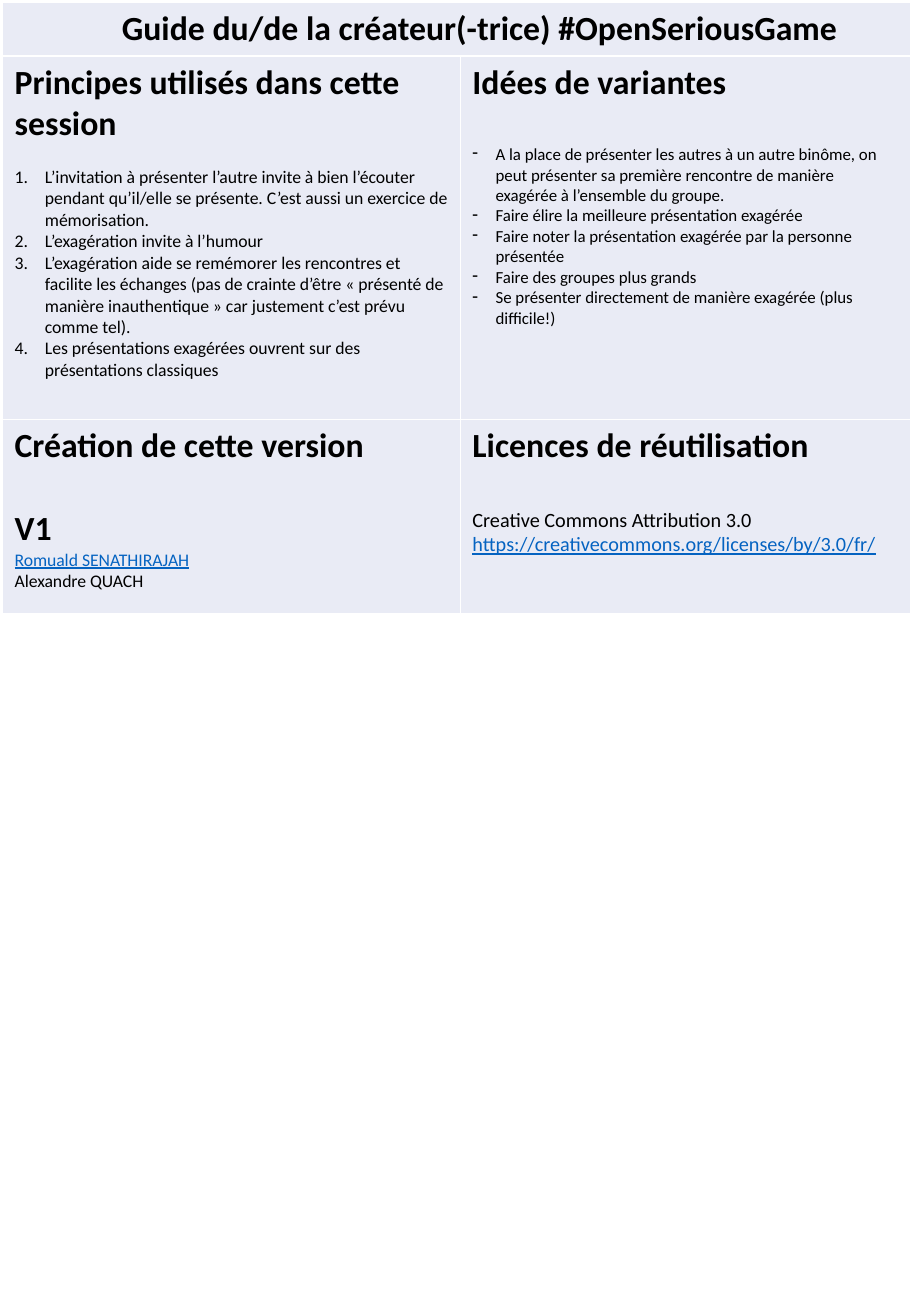
import pptx
import pptx.dml.color
import pptx.enum.text
import pptx.oxml.ns
import pptx.util
from lxml import etree

PAGE_WIDTH, PAGE_HEIGHT = 7.5, 10.83
MARGIN = 0.02
COLUMNS = [3.77, 3.71]
ROWS = [0.44, 2.99, 1.6]
FONT = "Calibri"
HEADING_SIZE = 20
COLORS = {"cell": "E9EBF5", "border": "FFFFFF", "text": "000000", "link": "0563C1"}
NUMBER = ("buAutoNum", "type", "arabicPeriod")
DASH = ("buChar", "char", "-")

PRINCIPLES = [
    "L’invitation à présenter l’autre invite à bien l’écouter pendant qu’il/elle se présente. "
    "C’est aussi un exercice de mémorisation.",
    "L’exagération invite à l’humour",
    "L’exagération aide se remémorer les rencontres et facilite les échanges (pas de crainte "
    "d’être « présenté de manière inauthentique » car justement c’est prévu comme tel).",
    "Les présentations exagérées ouvrent sur des présentations classiques",
]
VARIANTS = [
    "A la place de présenter les autres à un autre binôme, on peut présenter sa première "
    "rencontre de manière exagérée à l’ensemble du groupe.",
    "Faire élire la meilleure présentation exagérée",
    "Faire noter la présentation exagérée par la personne présentée",
    "Faire des groupes plus grands",
    "Se présenter directement de manière exagérée (plus difficile!)",
]


def rgb(name):
    return pptx.dml.color.RGBColor.from_string(COLORS[name])


def add_element(parent, tag, **attributes):
    return etree.SubElement(parent, pptx.oxml.ns.qn(f"a:{tag}"), attributes)


def style_cell(cell):
    properties = cell._tc.get_or_add_tcPr()
    for side in ("lnL", "lnR", "lnT", "lnB"):
        line = add_element(properties, side, w=str(pptx.util.Pt(1)))
        fill = add_element(line, "solidFill")
        add_element(fill, "srgbClr", val=COLORS["border"])
    cell.fill.solid()
    cell.fill.fore_color.rgb = rgb("cell")


def add_paragraph(cell, text, size, bold=False, link=False):
    frame = cell.text_frame
    first = frame.paragraphs[0]
    para = frame.add_paragraph() if first.runs else first
    span = para.add_run()
    span.text = text
    font = span.font
    font.name = FONT
    font.size = pptx.util.Pt(size)
    font.bold = bold
    font.underline = link
    font.color.rgb = rgb("link" if link else "text")
    return para


def add_heading(cell, text, gap=24.4):
    para = add_paragraph(cell, text, HEADING_SIZE, bold=True)
    para.space_after = pptx.util.Pt(gap)


def add_list(cell, items, size, indent, bullet):
    tag, attribute, value = bullet
    for item in items:
        para = add_paragraph(cell, item, size)
        properties = para._p.get_or_add_pPr()
        properties.set("marL", str(pptx.util.Inches(indent)))
        properties.set("indent", str(-pptx.util.Inches(indent)))
        add_element(properties, tag, **{attribute: value})


def add_guide_table(page):
    frame = page.shapes.add_table(
        len(ROWS), len(COLUMNS), pptx.util.Inches(MARGIN), pptx.util.Inches(MARGIN),
        pptx.util.Inches(sum(COLUMNS)), pptx.util.Inches(sum(ROWS)))
    table = frame.table
    table.first_row = False
    table.horz_banding = False
    for column, width in zip(table.columns, COLUMNS):
        column.width = pptx.util.Inches(width)
    for row, height in zip(table.rows, ROWS):
        row.height = pptx.util.Inches(height)
    for cell in table.iter_cells():
        style_cell(cell)
    return table


def fill_title(table):
    cell = table.cell(0, 0)
    cell.merge(table.cell(0, 1))
    para = add_paragraph(
        cell, "Guide du/de la créateur(-trice) #OpenSeriousGame", HEADING_SIZE, bold=True)
    para.alignment = pptx.enum.text.PP_ALIGN.CENTER
    properties = para._p.get_or_add_pPr()
    properties.set("marL", str(pptx.util.Inches(0.38)))
    properties.set("indent", "0")


def fill_sections(table):
    principles, variants = table.cell(1, 0), table.cell(1, 1)
    add_heading(principles, "Principes utilisés dans cette session", gap=12.8)
    add_list(principles, PRINCIPLES, 10.5, 0.25, NUMBER)
    add_heading(variants, "Idées de variantes")
    add_list(variants, VARIANTS, 10, 0.19, DASH)

    creation, licences = table.cell(2, 0), table.cell(2, 1)
    add_heading(creation, "Création de cette version")
    add_paragraph(creation, "V1", HEADING_SIZE, bold=True)
    add_paragraph(creation, "Romuald SENATHIRAJAH", 10.5, link=True)
    add_paragraph(creation, "Alexandre QUACH", 10.5)
    add_heading(licences, "Licences de réutilisation")
    add_paragraph(licences, "Creative Commons Attribution 3.0", 12)
    add_paragraph(licences, "https://creativecommons.org/licenses/by/3.0/fr/", 12, link=True)


def main():
    deck = pptx.Presentation()
    deck.slide_width = pptx.util.Inches(PAGE_WIDTH)
    deck.slide_height = pptx.util.Inches(PAGE_HEIGHT)
    page = deck.slides.add_slide(deck.slide_layouts.get_by_name("Blank"))
    table = add_guide_table(page)
    fill_title(table)
    fill_sections(table)
    deck.save("out.pptx")


if __name__ == "__main__":
    main()
